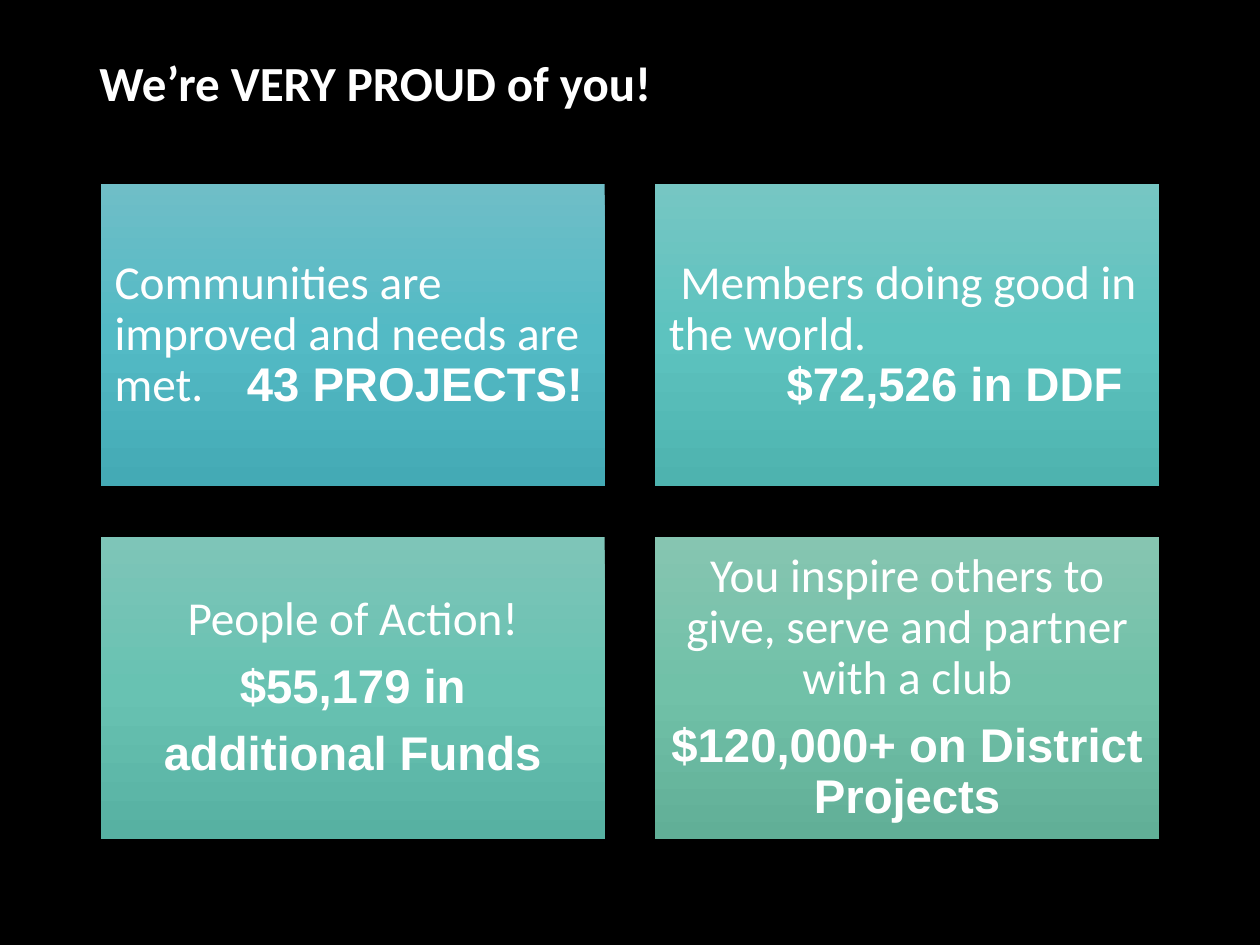
from copy import deepcopy

from lxml import etree
from pptx import Presentation
from pptx.dml.color import RGBColor
from pptx.enum.shapes import MSO_SHAPE
from pptx.enum.text import MSO_ANCHOR, PP_ALIGN
from pptx.oxml.ns import qn
from pptx.util import Inches, Pt

LEFT, CENTER, RIGHT = PP_ALIGN.LEFT, PP_ALIGN.CENTER, PP_ALIGN.RIGHT
TOP, MIDDLE = MSO_ANCHOR.TOP, MSO_ANCHOR.MIDDLE
RECTANGLE = MSO_SHAPE.RECTANGLE

CARD_WIDTH, CARD_HEIGHT, GAP = 4, 2.4, 0.4
GRID_LEFT, GRID_TOP = 0.8, 1.46
INSET = 0.11
TEXT_SIZE = 27


def color(value):
    return RGBColor.from_string(value)


def style(span, size, font, bold):
    span.font.size = Pt(size)
    span.font.name = font
    span.font.bold = bold
    span.font.color.rgb = color("FFFFFF")


deck = Presentation()
deck.slide_width, deck.slide_height = Inches(10), Inches(7.5)
page = deck.slides.add_slide(deck.slide_layouts[6])
page.background.fill.solid()
page.background.fill.fore_color.rgb = color("000000")

title = page.shapes.add_textbox(Inches(0.69), Inches(0.4), Inches(8.62), Inches(0.7))
title.text_frame.word_wrap = True
title.text_frame.vertical_anchor = TOP
title.text_frame.margin_top = Inches(0.07)
title.text_frame.text = "We’re VERY PROUD of you!"
title.text_frame.paragraphs[0].line_spacing = 0.9
style(title.text_frame.paragraphs[0].runs[0], 28, "Calibri", True)

# Each card: gradient colours, then paragraphs of (alignment, plain text, bold text)
cards = [
    (("6FBEC7", "53BAC5", "44AAB5"),
     [(LEFT, "Communities are improved and needs are met.\t", "43 PROJECTS!")]),
    (("76C6C3", "5DC3BF", "4EB3AF"),
     [(LEFT, "Members doing good in the world.", ""),
      (RIGHT, "", "$72,526 in DDF")]),
    (("7EC5B8", "68C2B2", "57B1A2"),
     [(CENTER, "People of Action!", ""),
      (CENTER, "", "$55,179 in"),
      (CENTER, "", "additional Funds")]),
    (("86C5B1", "71C1A8", "61AF97"),
     [(CENTER, "You inspire others to give, serve and partner with a club", ""),
      (CENTER, "", "$120,000+ on District Projects")]),
]

for index, (gradient, paragraphs) in enumerate(cards):
    row, column = divmod(index, 2)
    card = page.shapes.add_shape(
        RECTANGLE,
        Inches(GRID_LEFT + column * (CARD_WIDTH + GAP)),
        Inches(GRID_TOP + row * (CARD_HEIGHT + GAP)),
        Inches(CARD_WIDTH), Inches(CARD_HEIGHT))
    card.shadow.inherit = False
    card.line.fill.background()

    card.fill.gradient()
    card.fill.gradient_angle = 270
    stop_list = card._element.spPr.find(qn("a:gradFill")).find(qn("a:gsLst"))
    stop_list.insert(1, deepcopy(stop_list[0]))
    for stop, position, shade in zip(card.fill.gradient_stops, (0, 0.5, 1), gradient):
        stop.position = position
        stop.color.rgb = color(shade)

    frame = card.text_frame
    frame.word_wrap = True
    frame.vertical_anchor = MIDDLE
    frame.margin_left = frame.margin_right = Inches(INSET)
    frame.margin_top = frame.margin_bottom = Inches(INSET)
    for number, (alignment, plain, strong) in enumerate(paragraphs):
        para = frame.add_paragraph() if number else frame.paragraphs[0]
        para.alignment = alignment
        para.line_spacing = 0.9
        para.space_after = Pt(0 if alignment == LEFT else 0.35 * TEXT_SIZE)
        properties = para._p.get_or_add_pPr()
        if alignment == RIGHT:
            properties.set("marR", str(Inches(0.18)))
        elif alignment == LEFT and not strong:
            properties.set("indent", str(Inches(0.09)))
        if "\t" in plain:
            tabs = etree.SubElement(properties, qn("a:tabLst"))
            etree.SubElement(tabs, qn("a:tab"), pos=str(Inches(1.05)), algn="l")
        for text, font, bold in ((plain, "Calibri", False), (strong, "Arial", True)):
            if text:
                span = para.add_run()
                span.text = text
                style(span, TEXT_SIZE, font, bold)

deck.save("out.pptx")
